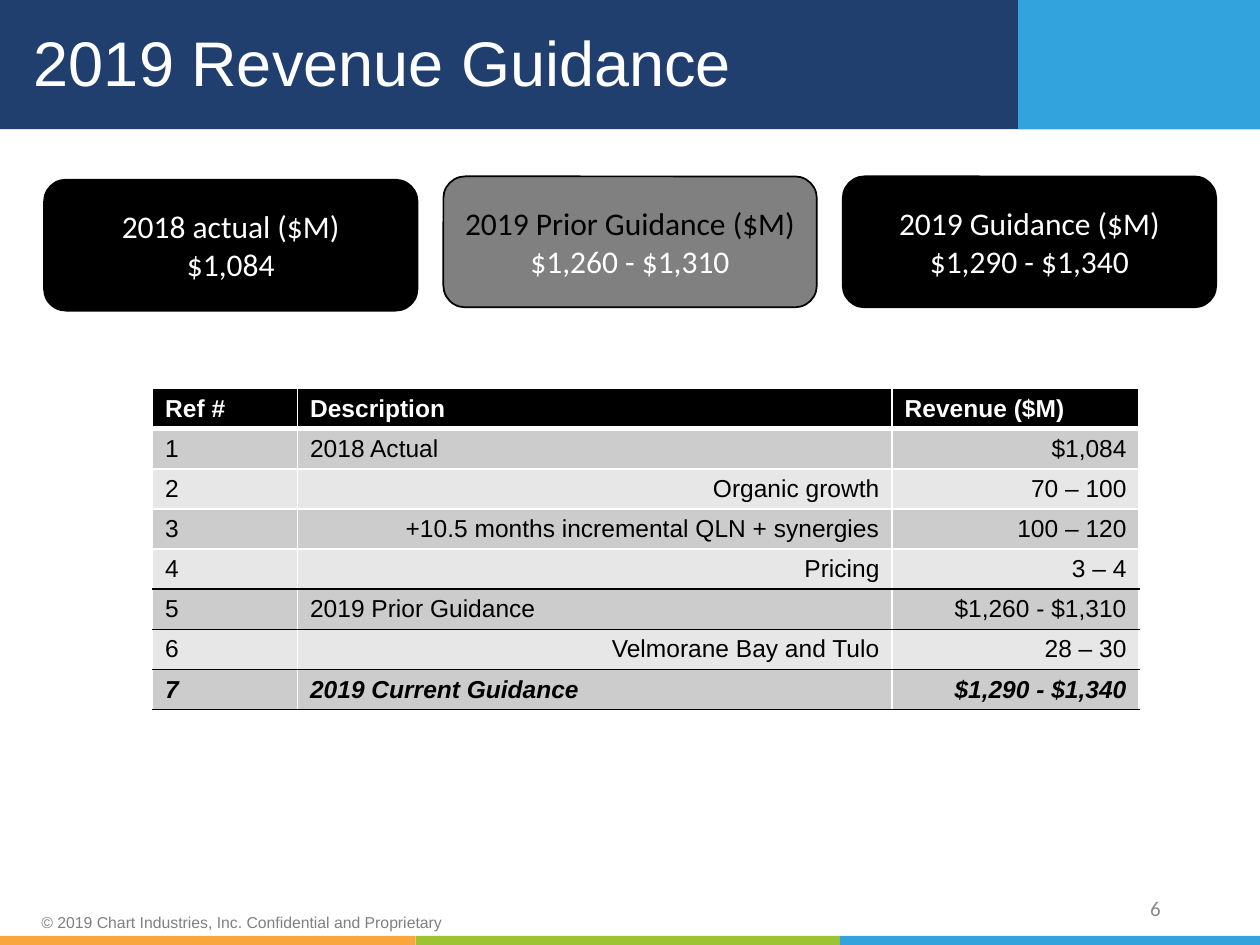
from lxml import etree
from pptx import Presentation
from pptx.dml.color import RGBColor
from pptx.enum.shapes import MSO_SHAPE as Preset
from pptx.enum.text import MSO_ANCHOR as Anchor, MSO_AUTO_SIZE as AutoSize, PP_ALIGN as Align
from pptx.oxml.ns import qn
from pptx.util import Pt

WHITE, BLACK, GRAY = "FFFFFF", "000000", "808080"
NAVY, BLUE, ORANGE, GREEN = "203F6E", "33A3DD", "F9A63F", "9DC335"
ROW_FILLS = ("E7E7E7", "CCCCCC")

CARDS = [
    ("2018 actual ($M)", "$1,084", BLACK, WHITE, 1.9),
    ("2019 Prior Guidance ($M)", "$1,260 - $1,310", GRAY, BLACK, 0),
    ("2019 Guidance ($M)", "$1,290 - $1,340", BLACK, WHITE, 0),
]
ROWS = [
    ("Ref #", "Description", "Revenue ($M)"),
    ("1", "2018 Actual", "$1,084"),
    ("2", "Organic growth", "70 – 100"),
    ("3", "+10.5 months incremental QLN + synergies", "100 – 120"),
    ("4", "Pricing", "3 – 4"),
    ("5", "2019 Prior Guidance", "$1,260 - $1,310"),
    ("6", "Velmorane Bay and Tulo", "28 – 30"),
    ("7", "2019 Current Guidance", "$1,290 - $1,340"),
]
COMPONENT_ROWS = (2, 3, 4, 6)
FIRST_RULED_ROW = 4


def color(value):
    return RGBColor.from_string(value)


def set_all(target, formats):
    for name, value in formats.items():
        setattr(target, name, value)


def write(para, text, size, ink, font="Arial", align=Align.LEFT, **style):
    para.alignment = align
    span = para.add_run()
    span.text = text
    set_all(span.font, {"name": font, "size": Pt(size), **style})
    span.font.color.rgb = color(ink)


def add_block(page, box, fill, preset=Preset.RECTANGLE, line=None):
    shape = page.shapes.add_shape(preset, *map(Pt, box))
    shape.shadow.inherit = False
    shape.fill.solid()
    shape.fill.fore_color.rgb = color(fill)
    if line:
        shape.line.color.rgb = color(line)
        shape.line.width = Pt(1)
    else:
        shape.line.fill.background()
    return shape


def add_label(page, box, text, size, ink, inset, **style):
    frame = page.shapes.add_textbox(*map(Pt, box)).text_frame
    set_all(frame, {"word_wrap": True, "vertical_anchor": Anchor.MIDDLE,
                    "margin_top": Pt(inset), "margin_bottom": Pt(inset)})
    write(frame.paragraphs[0], text, size, ink, **style)


def add_header(page, box, text):
    left, top, width, height = box
    accent_left = left + 581.8
    add_block(page, box, NAVY)
    add_block(page, (accent_left, top, left + width - accent_left, height), BLUE)
    title = page.shapes.title
    set_all(title, {"left": Pt(left + 12.2), "top": Pt(top + 6.5),
                    "width": Pt(563.8), "height": Pt(62.6)})
    title.element.getparent().append(title.element)
    frame = title.text_frame
    set_all(frame, {"word_wrap": True, "auto_size": AutoSize.NONE,
                    "vertical_anchor": Anchor.MIDDLE})
    para = frame.paragraphs[0]
    para.line_spacing = 0.9
    write(para, text, 36, WHITE)


def add_footer(page, box):
    left, top, width, height = box
    bar_height = 5.2
    bar_top = top + height - bar_height
    third = width / 3
    for index, fill in enumerate((ORANGE, GREEN, BLUE)):
        add_block(page, (left + index * third - 2.4 * (index == 1), bar_top,
                         third + 2.4 * (index == 1) - 2.4 * (index == 0), bar_height), fill)
    add_label(page, (left + 16.6, top + 15.8, 250, 13),
              "© 2019 Chart Industries, Inc. Confidential and Proprietary", 9, GRAY, 1.4)
    add_label(page, (left + 508.3, top, 162, 28.8), "6", 12, "8C8C8C", 3.6,
              font="Calibri", align=Align.RIGHT)


def add_cards(page, box):
    left, top, width, height = box
    card_width = 213.4
    step = (width - card_width) / (len(CARDS) - 1)
    for index, (heading, amount, fill, ink, drop) in enumerate(CARDS):
        card = add_block(page, (left + index * step, top + drop, card_width, height),
                         fill, Preset.ROUNDED_RECTANGLE, BLACK)
        frame = card.text_frame
        set_all(frame, {"word_wrap": True, "vertical_anchor": Anchor.MIDDLE})
        write(frame.paragraphs[0], heading, 18, ink, "Calibri", Align.CENTER)
        write(frame.add_paragraph(), amount, 18, WHITE, "Calibri", Align.CENTER)


def set_borders(cell, top, bottom):
    """Draw white sides, and top and bottom edges given as (colour, width)."""
    props = cell._tc.get_or_add_tcPr()
    side = (WHITE, 1)
    edges = {"a:lnL": side, "a:lnR": side, "a:lnT": top, "a:lnB": bottom}
    for index, (tag, (ink, width)) in enumerate(edges.items()):
        line = etree.Element(qn(tag), w=str(Pt(width)))
        fill = etree.SubElement(line, qn("a:solidFill"))
        etree.SubElement(fill, qn("a:srgbClr"), val=ink)
        props.insert(index, line)


def edge_below(row):
    if row == 0:
        return WHITE, 3
    return (BLACK if row >= FIRST_RULED_ROW else WHITE), 1


def add_revenue_table(page, box):
    frame = page.shapes.add_table(len(ROWS), 3, *map(Pt, box))
    table = frame.table
    for column, width in zip(table.columns, (82.8, 339.8, 141.2)):
        column.width = Pt(width)
    for row, texts in enumerate(ROWS):
        table.rows[row].height = Pt(box[3] / len(ROWS))
        is_header, is_total = row == 0, row == len(ROWS) - 1
        for col, text in enumerate(texts):
            cell = table.cell(row, col)
            set_all(cell, {"margin_top": Pt(3), "margin_bottom": Pt(3),
                           "vertical_anchor": Anchor.MIDDLE})
            cell.fill.solid()
            cell.fill.fore_color.rgb = color(BLACK if is_header else ROW_FILLS[row % 2])
            set_borders(cell, (WHITE, 1) if is_header else edge_below(row - 1),
                        edge_below(row))
            to_right = not is_header and (col == 2 or col == 1 and row in COMPONENT_ROWS)
            write(cell.text_frame.paragraphs[0], text, 14, WHITE if is_header else BLACK,
                  align=Align.RIGHT if to_right else Align.LEFT,
                  bold=is_header or is_total, italic=is_total)


def main():
    deck = Presentation()
    set_all(deck, {"slide_width": Pt(720), "slide_height": Pt(540)})
    page = deck.slides.add_slide(deck.slide_layouts[5])
    add_header(page, (0, 0, 720, 73.8), "2019 Revenue Guidance")
    add_footer(page, (0, 504.7, 720, 35.3))
    add_cards(page, (25.2, 100.8, 669.8, 74.8))
    add_revenue_table(page, (87.2, 222, 563.8, 183.6))
    deck.save("out.pptx")


if __name__ == "__main__":
    main()
